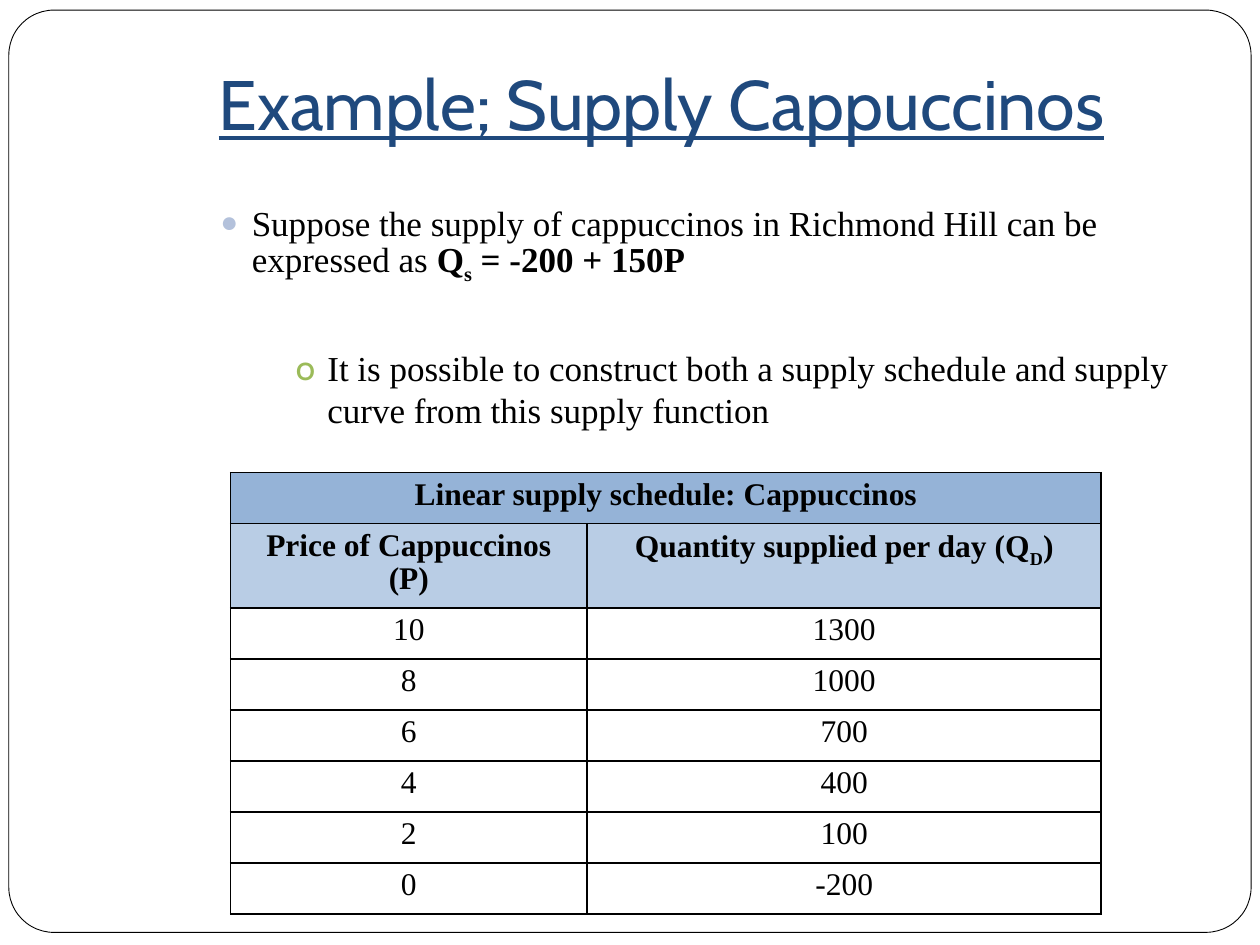
from pptx import Presentation
from pptx.dml.color import RGBColor
from pptx.enum.shapes import MSO_SHAPE as Shape
from pptx.enum.text import MSO_ANCHOR as Anchor, PP_ALIGN as Align
from pptx.oxml import parse_xml
from pptx.oxml.ns import nsdecls
from pptx.util import Inches, Pt

TITLE = "Example; Supply Cappuccinos"
SERIF = "Times New Roman"
POINTS = [
    dict(runs=[("Suppose the supply of cappuccinos in Richmond Hill can be expressed as ", ""),
               ("Q", "b"), ("s", "b_"), (" = -200 + 150P", "b")],
         left=0.9, gap=0, mark="●", tint="B3C1DB", scale=85, face=SERIF),
    dict(runs=[("It is possible to construct both a supply schedule and supply "
                "curve from this supply function", "")],
         left=1.5, gap=35, mark="o", tint="9BBB59", scale=100, face="Cabin"),
]
HEADS = [
    [[("Linear supply schedule: Cappuccinos", "b")], []],
    [[("Price of Cappuccinos (P)", "b")],
     [("Quantity supplied per day (Q", "b"), ("D", "b_"), (")", "b")]],
]
PRICES = [10, 8, 6, 4, 2, 0]
FILLS = ["95B3D7", "B9CDE5"]
COLS = [2.83, 4.08]
HIGH = 3.24


def paint(part, color):
    part.solid()
    part.fore_color.rgb = RGBColor.from_string(color)


def write(para, runs, size=20, font=SERIF, color="000000", align=Align.LEFT, space=None):
    para.alignment = align
    para.line_spacing = space
    for text, style in runs:
        run = para.add_run()
        run.text = text
        face = run.font
        face.name, face.size = font, Pt(size)
        face.bold = "b" in style
        face.underline = "u" in style
        paint(face.fill, color)
        if "_" in style:
            run._r.get_or_add_rPr().set("baseline", "-25000")


def add_box(slide, left, top, wide, high):
    frame = slide.shapes.add_textbox(*map(Inches, (left, top, wide, high))).text_frame
    frame.word_wrap = True
    return frame


def add_mark(para, left, mark, tint, scale, face):
    props = para._p.get_or_add_pPr()
    props.set("marL", str(Inches(left)))
    props.set("indent", str(Inches(-0.25)))
    for xml in (f'<a:buClr {{}}><a:srgbClr val="{tint}"/></a:buClr>',
                f'<a:buSzPct {{}} val="{scale * 1000}"/>',
                f'<a:buFont {{}} typeface="{face}"/>',
                f'<a:buChar {{}} char="{mark}"/>'):
        props.append(parse_xml(xml.format(nsdecls("a"))))


def add_edges(cell):
    props = cell._tc.get_or_add_tcPr()
    for side in "LRTB":
        props.append(parse_xml(
            f'<a:ln{side} {nsdecls("a")} w="{Pt(1)}"><a:solidFill>'
            f'<a:srgbClr val="000000"/></a:solidFill></a:ln{side}>'))


def add_grid(slide):
    rows = HEADS + [[[(str(p), "")], [(str(150 * p - 200), "")]] for p in PRICES]
    grid = slide.shapes.add_table(len(rows), len(COLS), Inches(1.83), Inches(3.75),
                                  Inches(sum(COLS)), Inches(HIGH)).table
    grid.first_row = grid.horz_banding = False
    for col, wide in zip(grid.columns, COLS):
        col.width = Inches(wide)
    for i, row in enumerate(rows):
        grid.rows[i].height = Inches(HIGH / len(rows))
        for j, runs in enumerate(row):
            cell = grid.cell(i, j)
            add_edges(cell)
            if i < len(FILLS):
                paint(cell.fill, FILLS[i])
            else:
                cell.fill.background()
            write(cell.text_frame.paragraphs[0], runs, size=18,
                  align=Align.CENTER, space=0.95)
    grid.cell(0, 0).merge(grid.cell(0, 1))


def main():
    """Build the supply schedule slide."""
    deck = Presentation()
    deck.slide_width, deck.slide_height = Inches(10), Inches(7.5)
    slide = deck.slides.add_slide(deck.slide_layouts[6])

    frame = slide.shapes.add_shape(Shape.ROUNDED_RECTANGLE,
                                   *map(Inches, (0.07, 0.08, 9.86, 7.32)))
    frame.adjustments[0] = 0.049
    frame.shadow.inherit = False
    paint(frame.fill, "FFFFFF")
    paint(frame.line.fill, "000000")
    frame.line.width = Pt(0.5)

    head = add_box(slide, 1, 0.3, 8.5, 0.95)
    head.vertical_anchor = Anchor.BOTTOM
    head.margin_bottom = Inches(0.1)
    write(head.paragraphs[0], [(TITLE, "u")], size=40, font="Cabin",
          color="1F497D", align=Align.CENTER)

    body = add_box(slide, 1, 1.17, 8.5, 5.42)
    body.margin_top = Inches(0.43)
    for i, point in enumerate(POINTS):
        para = body.add_paragraph() if i else body.paragraphs[0]
        write(para, point["runs"], space=Pt(24))
        para.space_before = Pt(point["gap"])
        add_mark(para, *(point[k] for k in ("left", "mark", "tint", "scale", "face")))

    add_grid(slide)
    deck.save("out.pptx")


if __name__ == "__main__":
    main()
